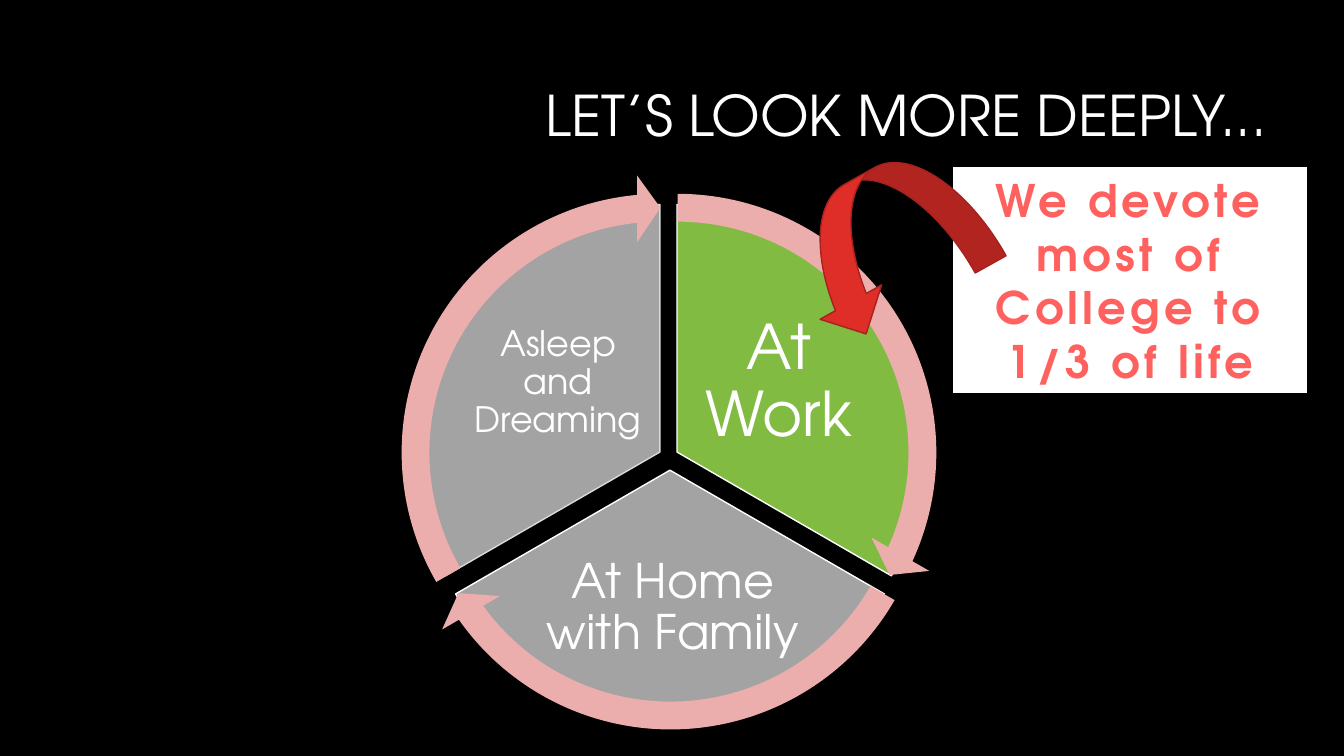
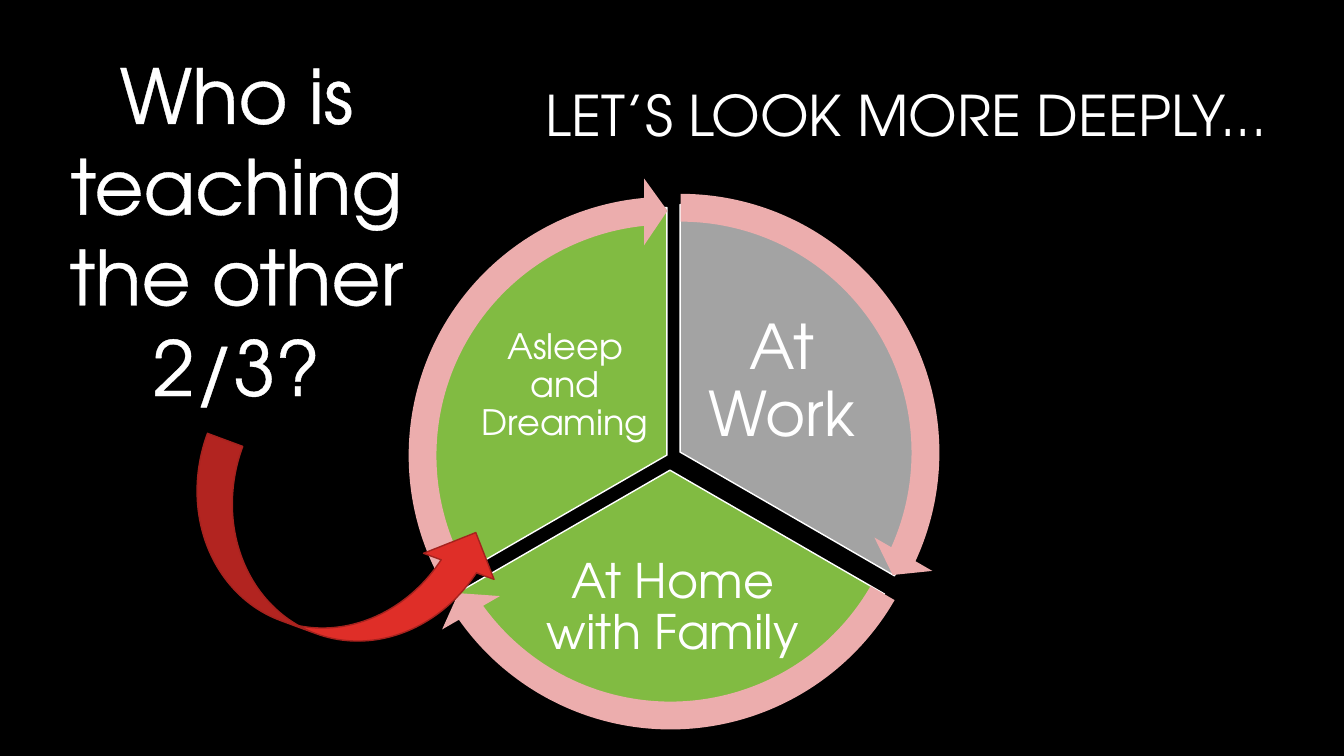
from dataclasses import dataclass
from typing import NamedTuple

from lxml import etree
from pptx import Presentation
from pptx.dml.color import RGBColor
from pptx.enum.shapes import MSO_SHAPE
from pptx.enum.text import MSO_ANCHOR, MSO_AUTO_SIZE, PP_ALIGN
from pptx.oxml.ns import qn
from pptx.util import Emu, Pt

RECTANGLE = MSO_SHAPE.RECTANGLE
PIE = MSO_SHAPE.PIE
CIRCULAR_ARROW = MSO_SHAPE.CIRCULAR_ARROW
CURVED_RIGHT_ARROW = MSO_SHAPE.CURVED_RIGHT_ARROW
CURVED_UP_ARROW = MSO_SHAPE.CURVED_UP_ARROW
TOP, MIDDLE = MSO_ANCHOR.TOP, MSO_ANCHOR.MIDDLE
CENTER, RIGHT = PP_ALIGN.CENTER, PP_ALIGN.RIGHT
NO_FIT = MSO_AUTO_SIZE.NONE

EMU_PER_PX = 9144
FONT = "TeX Gyre Adventor"
BLACK, WHITE = "000000", "FFFFFF"
GREEN, GRAY, SILVER = "81BB42", "A3A3A3", "DADADA"
PINK, RED, DARK_RED = "ECADAD", "DF2E28", "A5221E"
CORAL, CRIMSON, BLUSH = "FF615F", "C30600", "FCF4F4"

TITLE_TEXT = "LET’S LOOK MORE DEEPLY... "
PIE_SIZE, RING_SIZE, RING_OFFSET = 491, 552, 30
RING_THICKNESS, RING_HEAD_ANGLE, RING_HEAD_WIDTH = 0.05, 3.28, 0.06


class Box(NamedTuple):
    left: int
    top: int
    width: int
    height: int


@dataclass(frozen=True)
class Sector:
    label: str
    left: int
    top: int
    label_box: Box
    start: int
    end: int
    size: int
    inset: int


@dataclass(frozen=True)
class SectorLook:
    fill: str
    line: str = WHITE
    shift_x: int = 0
    shift_y: int = 0


TITLE_BOX = Box(340, 47, 942, 141)
SECTORS = (
    Sector("At Work", 426, 203, Box(259, 104, 175, 146), 162, 18, 44, 6),
    Sector("At Home with Family", 419, 221, Box(117, 318, 263, 129), 18, 90, 34, 5),
    Sector("Asleep and Dreaming", 409, 203, Box(57, 104, 175, 146), 90, 162, 25, 3),
)
WORK_LOOKS = (SectorLook(GREEN), SectorLook(GRAY), SectorLook(GRAY, SILVER))
REST_LOOKS = (
    SectorLook(GRAY, shift_x=3),
    SectorLook(GREEN),
    SectorLook(GREEN, shift_x=7, shift_y=3),
)


def px(length: int) -> Emu:
    return Emu(length * EMU_PER_PX)


def rgb(color: str) -> RGBColor:
    return RGBColor.from_string(color)


def place(box: Box) -> list[Emu]:
    return [px(length) for length in box]


def write(shape, text: str, size: int, align=CENTER, anchor=MIDDLE,
          inset: int | None = None, spacing: float | None = None):
    frame = shape.text_frame
    frame.word_wrap = True
    frame.auto_size = NO_FIT
    frame.vertical_anchor = anchor
    if inset is not None:
        frame.margin_left = frame.margin_right = px(inset)
        frame.margin_top = frame.margin_bottom = px(inset)
    para = frame.paragraphs[0]
    para.alignment = align
    if spacing is not None:
        para.line_spacing = spacing
    span = para.add_run()
    span.text = text
    span.font.name = FONT
    span.font.size = Pt(size)
    span.font.color.rgb = rgb(WHITE)
    return span


def add_color(parent, color: str):
    return etree.SubElement(parent, qn("a:srgbClr"), val=color)


def outline_text(span, color: str, width: float) -> None:
    line = etree.Element(qn("a:ln"), w=str(int(Pt(width))))
    add_color(etree.SubElement(line, qn("a:solidFill")), color)
    span.font._element.insert(0, line)


def style_callout_text(span) -> None:
    span.font.bold = True
    properties = span.font._element
    properties.set("spc", "300")
    gradient = etree.Element(qn("a:gradFill"))
    stops = etree.SubElement(gradient, qn("a:gsLst"))
    for position, color in ((10, CORAL), (75, CRIMSON)):
        add_color(etree.SubElement(stops, qn("a:gs"), pos=str(position * 1000)), color)
    etree.SubElement(gradient, qn("a:lin"), ang="5400000")
    solid = properties.find(qn("a:solidFill"))
    properties.replace(solid, gradient)
    effects = etree.Element(qn("a:effectLst"))
    shadow = etree.SubElement(
        effects, qn("a:outerShdw"), blurRad="12700", dist="25400", dir="2700000"
    )
    add_color(shadow, CORAL)
    gradient.addnext(effects)
    outline_text(span, BLUSH, 0.9)


def draw(shapes, kind, box: Box, fill: str, line: str | None = None,
         adjustments: tuple[float, ...] = (), rotation: float = 0):
    shape = shapes.add_shape(kind, *place(box))
    shape.shadow.inherit = False
    shape.fill.solid()
    shape.fill.fore_color.rgb = rgb(fill)
    if line is None:
        shape.line.fill.background()
    else:
        shape.line.color.rgb = rgb(line)
        shape.line.width = Pt(1)
    for index, value in enumerate(adjustments):
        shape.adjustments[index] = value
    shape.rotation = rotation
    return shape


def draw_wheel(page, looks: tuple[SectorLook, ...]) -> None:
    shapes = page.shapes.add_group_shape().shapes
    rings = []
    for sector, look in zip(SECTORS, looks):
        left, top = sector.left + look.shift_x, sector.top + look.shift_y
        draw(shapes, PIE, Box(left, top, PIE_SIZE, PIE_SIZE), look.fill, look.line,
             (sector.start, sector.end))
        offset = sector.label_box
        label_box = offset._replace(left=left + offset.left, top=top + offset.top)
        label = shapes.add_textbox(*place(label_box))
        write(label, sector.label, sector.size, inset=sector.inset, spacing=0.9)
        ring_box = Box(left - RING_OFFSET, top - RING_OFFSET, RING_SIZE, RING_SIZE)
        rings.append((ring_box, sector))
    for ring_box, sector in rings:
        draw(shapes, CIRCULAR_ARROW, ring_box, PINK, adjustments=(
            RING_THICKNESS, RING_HEAD_ANGLE, sector.end - RING_HEAD_ANGLE,
            sector.start, RING_HEAD_WIDTH))


def add_page(deck, looks: tuple[SectorLook, ...]):
    page = deck.slides.add_slide(deck.slide_layouts.get_by_name("Title Only"))
    title = page.shapes.title
    title.left, title.top, title.width, title.height = place(TITLE_BOX)
    write(title, TITLE_TEXT, 40, align=RIGHT, spacing=0.9)
    draw_wheel(page, looks)
    return page


def build_work_page(deck) -> None:
    page = add_page(deck, WORK_LOOKS)
    callout = draw(page.shapes, RECTANGLE, Box(945, 165, 352, 226), WHITE, BLACK)
    style_callout_text(write(callout, "We devote most of College to 1/3 of life", 32))
    draw(page.shapes, CURVED_RIGHT_ARROW, Box(809, 143, 140, 194), RED, DARK_RED,
         rotation=60.8)


def build_rest_page(deck) -> None:
    page = add_page(deck, REST_LOOKS)
    question = page.shapes.add_textbox(*place(Box(47, 43, 375, 374)))
    span = write(question, "Who is teaching the other 2/3?", 54, anchor=TOP)
    outline_text(span, WHITE, 1.45)
    draw(page.shapes, CURVED_UP_ARROW, Box(170, 481, 321, 149), RED, DARK_RED,
         rotation=20.3)


def main() -> None:
    deck = Presentation()
    deck.slide_width, deck.slide_height = px(1333), px(750)
    background = deck.slide_master.background.fill
    background.solid()
    background.fore_color.rgb = rgb(BLACK)
    build_work_page(deck)
    build_rest_page(deck)
    deck.save("out.pptx")


if __name__ == "__main__":
    main()
